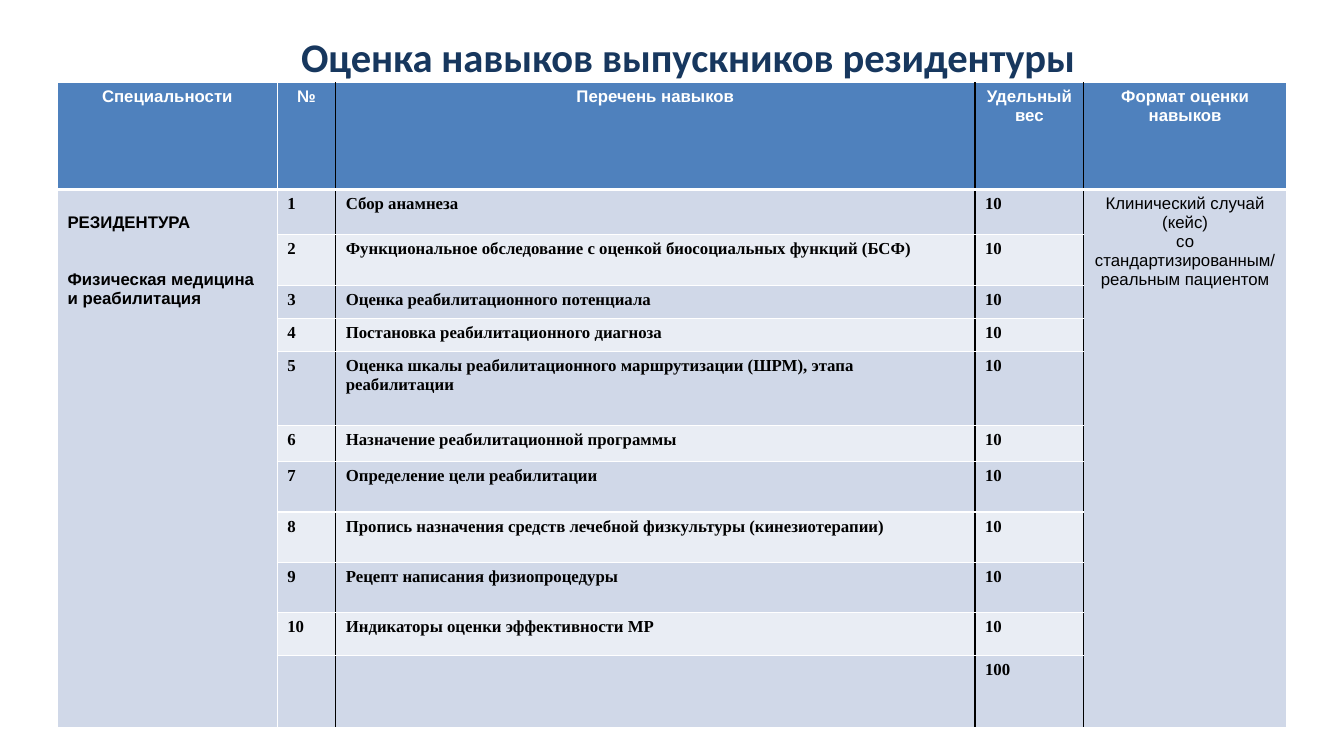
from lxml import etree
from pptx import Presentation
from pptx.dml.color import RGBColor
from pptx.enum.text import PP_ALIGN
from pptx.oxml.ns import qn
from pptx.util import Inches, Pt

CENTER = PP_ALIGN.CENTER
LEFT = PP_ALIGN.LEFT

NAVY = RGBColor(0x17, 0x37, 0x5E)
BLUE = RGBColor(0x4F, 0x81, 0xBD)
BAND_DARK = RGBColor(0xD0, 0xD8, 0xE8)
BAND_LIGHT = RGBColor(0xE9, 0xED, 0xF4)
WHITE = RGBColor(0xFF, 0xFF, 0xFF)
BLACK = RGBColor(0x00, 0x00, 0x00)

SANS = "Arial"
SERIF = "Times New Roman"
COLUMN_WIDTHS = [2.18, 0.58, 6.34, 1.08, 2.01]
ROW_HEIGHTS = [1.06, 0.45, 0.5, 0.33, 0.33, 0.73, 0.36, 0.5, 0.5, 0.5, 0.42, 0.72]
HEADINGS = ["Специальности", "№", "Перечень навыков", "Удельный вес", "Формат оценки навыков"]
SKILLS = [
    "Сбор анамнеза",
    "Функциональное обследование с оценкой биосоциальных функций (БСФ)",
    "Оценка реабилитационного потенциала",
    "Постановка реабилитационного диагноза",
    "Оценка шкалы реабилитационного маршрутизации (ШРМ), этапа реабилитации",
    "Назначение реабилитационной программы",
    "Определение цели реабилитации",
    "Пропись назначения средств лечебной физкультуры (кинезиотерапии)",
    "Рецепт написания физиопроцедуры",
    "Индикаторы оценки эффективности МР",
]
SPECIALTY = "РЕЗИДЕНТУРА\nФизическая медицина и реабилитация"
FORMAT = "Клинический случай (кейс)\nсо стандартизированным/\nреальным пациентом"
WEIGHT = 10


class SkillsSlide:
    def __init__(self, presentation):
        self.slide = presentation.slides.add_slide(presentation.slide_layouts[6])

    def fill_text(self, frame, text, font, size, color, bold=True, align=LEFT):
        frame.text = text
        frame.word_wrap = True
        for paragraph in frame.paragraphs:
            paragraph.alignment = align
            for run in paragraph.runs:
                run.font.name = font
                run.font.size = Pt(size)
                run.font.bold = bold
                run.font.color.rgb = color

    def title(self, text, left, top, width, height):
        box = self.slide.shapes.add_textbox(Inches(left), Inches(top), Inches(width), Inches(height))
        frame = box.text_frame
        frame.margin_left = frame.margin_right = frame.margin_bottom = 0
        frame.margin_top = Inches(0.01)
        self.fill_text(frame, text, "Calibri", 29, NAVY, align=CENTER)
        frame.paragraphs[0].runs[0]._r.get_or_add_rPr().set("spc", "-10")

    def table(self, left, top, widths, heights):
        table = self.slide.shapes.add_table(
            len(heights), len(widths), Inches(left), Inches(top),
            Inches(sum(widths)), Inches(sum(heights))).table
        table.first_row = table.horz_banding = False
        for column, width in zip(table.columns, widths):
            column.width = Inches(width)
        for row, height in zip(table.rows, heights):
            row.height = Inches(height)
        return table

    def border(self, cell, side, color, width):
        line = etree.SubElement(cell._tc.get_or_add_tcPr(), qn(f"a:ln{side}"), w=str(Pt(width)))
        fill = etree.SubElement(line, qn("a:solidFill"))
        etree.SubElement(fill, qn("a:srgbClr"), val=str(color))

    def paint(self, table):
        for row in range(len(table.rows)):
            for column in range(len(table.columns)):
                cell = table.cell(row, column)
                self.border(cell, "L", BLACK if column >= 2 else WHITE, 1)
                self.border(cell, "R", BLACK if 1 <= column <= 3 else WHITE, 1)
                self.border(cell, "T", WHITE, 3 if row == 1 else 1)
                self.border(cell, "B", WHITE, 3 if row == 0 else 1)
                cell.fill.solid()
                outer = column in (0, 4)
                band = BAND_DARK if outer or row % 2 else BAND_LIGHT
                cell.fill.fore_color.rgb = BLUE if row == 0 else band


def main():
    presentation = Presentation()
    presentation.slide_width = Inches(13.33)
    presentation.slide_height = Inches(7.5)
    page = SkillsSlide(presentation)
    page.title("Оценка навыков выпускников резидентуры", 0.57, 0.31, 12.51, 0.51)

    skills_table = page.table(0.57, 0.82, COLUMN_WIDTHS, ROW_HEIGHTS)
    page.paint(skills_table)
    last_row = len(ROW_HEIGHTS) - 1
    for column in (0, 4):
        skills_table.cell(1, column).merge(skills_table.cell(last_row, column))

    for column, heading in enumerate(HEADINGS):
        page.fill_text(skills_table.cell(0, column).text_frame, heading, SANS, 12, WHITE, align=CENTER)
    for number, skill in enumerate(SKILLS, 1):
        for column, text in enumerate([str(number), skill, str(WEIGHT)], 1):
            page.fill_text(skills_table.cell(number, column).text_frame, text, SERIF, 12, BLACK)
    total = str(WEIGHT * len(SKILLS))
    page.fill_text(skills_table.cell(last_row, 3).text_frame, total, SERIF, 12, BLACK)

    specialty = skills_table.cell(1, 0)
    specialty.margin_top = Inches(0.24)
    page.fill_text(specialty.text_frame, SPECIALTY, SANS, 12, BLACK)
    specialty.text_frame.paragraphs[1].space_before = Pt(27)
    page.fill_text(skills_table.cell(1, 4).text_frame, FORMAT, SANS, 12, BLACK, bold=False, align=CENTER)

    presentation.save("out.pptx")


if __name__ == "__main__":
    main()
